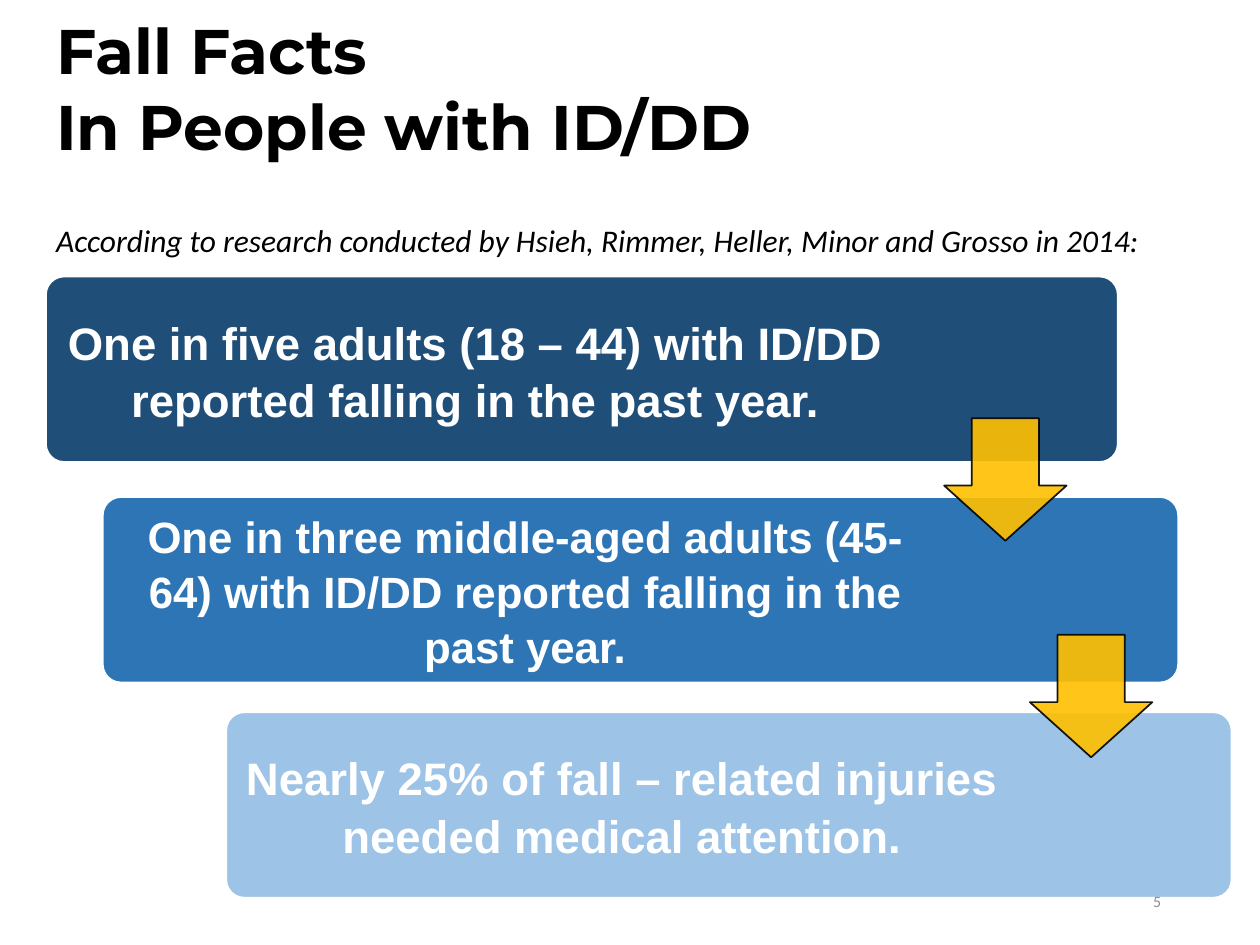
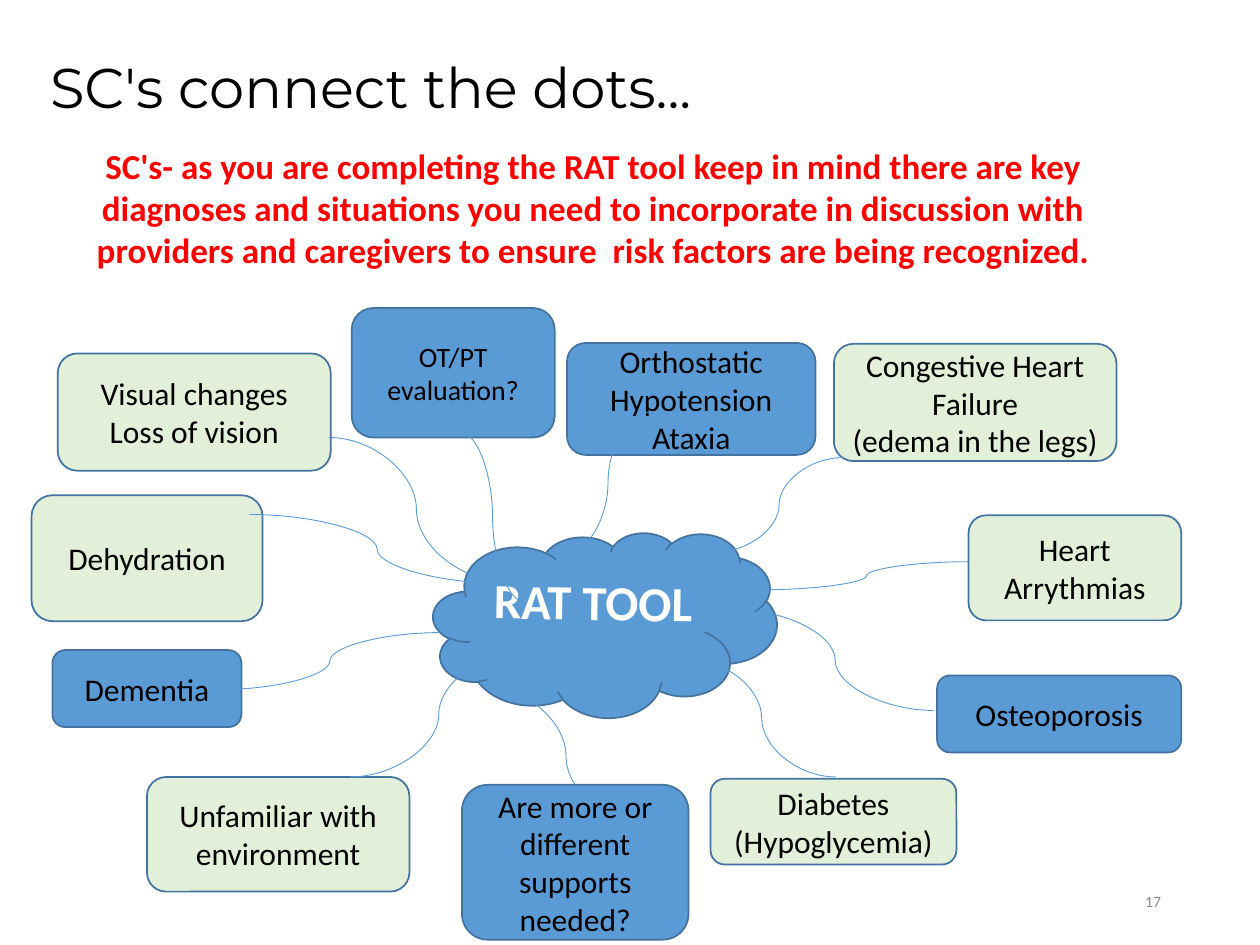
from lxml.etree import SubElement
from pptx import Presentation
from pptx.dml.color import RGBColor
from pptx.enum.shapes import MSO_CONNECTOR as Link, MSO_SHAPE as Shape
from pptx.enum.text import MSO_ANCHOR as Anchor, PP_ALIGN as Align
from pptx.oxml.ns import qn
from pptx.util import Pt

BLACK, WHITE, GREY, RED = "000000", "FFFFFF", "8C8C8C", "FF0000"
NAVY, MID_BLUE, PALE_BLUE, GOLD = "1F4E79", "2E75B6", "9DC3E6", "FFC000"
BLUE, GREEN, EDGE = "5B9BD5", "E2F0D9", "43739E"
TITLE_FONT, BODY_FONT, CARD_FONT = "Montserrat", "Calibri", "Arial"

CARD_HEIGHT, CARD_PAD, ARROW_SIZE = 106.5, 3.25, 70
FACTS = [
    ((0, 0, 613), 485, 26, 7.75, NAVY,
     "One in five adults (18 – 44) with ID/DD reported falling in the past year."),
    ((32.5, 126, 615), 476.5, 25, 7.5, MID_BLUE,
     "One in three middle-aged adults (45-64) with ID/DD reported falling in the past year."),
    ((103, 249, 575), 446.5, 26, 7.75, PALE_BLUE,
     "Nearly 25% of fall – related injuries needed medical attention."),
]
FACT_ARROWS = [(513.5, 81.25), (562.5, 205)]

CLOUD = (229.5, 128, 196.5, 106)
FACTORS = [
    ((15, 26, 156, 67), GREEN, ["Visual changes", "Loss of vision"]),
    ((306, 20, 142, 64), BLUE, ["Orthostatic Hypotension", "Ataxia"]),
    ((458.5, 20.5, 161.5, 67), GREEN, ["Congestive Heart Failure", "(edema in the legs)"]),
    ((535.5, 118.5, 121.5, 60), GREEN, ["Heart Arrythmias"]),
    ((517.5, 210, 139.5, 44), BLUE, ["Osteoporosis"]),
    ((388, 269, 140.5, 49), GREEN, ["Diabetes", "(Hypoglycemia)"]),
    ((66, 268, 150, 65.5), GREEN, ["Unfamiliar with environment"]),
    ((12, 195.5, 108, 44), BLUE, ["Dementia"]),
    ((0, 107, 132, 72), GREEN, ["Dehydration"]),
]
EVALUATION = ((183, 0, 116, 74), BLUE, ["OT/PT evaluation?"], 16)
SUPPORTS = ((246, 272.5, 129.5, 88.5), BLUE, ["Are more or different supports needed?"])
DOT_LINKS = [
    (403, 172.5, 515.5, 230), (463.5, 85.5, 391, 139.5), (535.5, 145, 419, 161),
    (459.5, 268, 375, 200.5), (232.5, 185.5, 108.5, 218), (283.5, 196, 182, 268),
    (355.5, 297, 255.5, 215), (353, 59.5, 306, 140), (270.5, 157.5, 124.5, 118),
    (270, 156, 170, 74), (281, 167.5, 246, 71.5),
]


def color(value):
    """Turn a hex string into a colour."""
    return RGBColor.from_string(value)


def points(*lengths):
    """Turn numbers into point lengths."""
    return [Pt(length) for length in lengths]


def within(region, box):
    """Shift a box by the top left corner of its region."""
    return (region[0] + box[0], region[1] + box[1], *box[2:])


def write(frame, lines, size, ink=BLACK, face=BODY_FONT, bold=False, italic=False,
          align=Align.LEFT, anchor=Anchor.TOP):
    """Fill a text frame with one styled run per paragraph."""
    frame.word_wrap = True
    frame.vertical_anchor = anchor
    for index, line in enumerate(lines):
        paragraph = frame.add_paragraph() if index else frame.paragraphs[0]
        paragraph.alignment = align
        run = paragraph.add_run()
        run.text = line
        run.font.name, run.font.size = face, Pt(size)
        run.font.bold, run.font.italic = bold, italic
        run.font.color.rgb = color(ink)
    return frame


def add_text(slide, box, lines, size, **style):
    """Add a text box and return its frame."""
    return write(slide.shapes.add_textbox(*points(*box)).text_frame, lines, size, **style)


def add_shape(slide, kind, box, fill, edge, weight=1):
    """Add a filled and outlined preset shape."""
    shape = slide.shapes.add_shape(kind, *points(*box))
    shape.shadow.inherit = False
    shape.fill.solid()
    shape.fill.fore_color.rgb = color(fill)
    shape.line.color.rgb = color(edge)
    shape.line.width = Pt(weight)
    return shape


def add_page_number(slide, number):
    """Add the slide number at the bottom right."""
    add_text(slide, (508.5, 500.5, 162, 28.8), [number], 9, ink=GREY,
             align=Align.RIGHT, anchor=Anchor.MIDDLE)


def add_fact_card(slide, box, text_width, size, inset, fill, fact):
    """Add one rounded card with its fact at the left."""
    card = add_shape(slide, Shape.ROUNDED_RECTANGLE, box, fill, WHITE, 1.5)
    card.adjustments[0] = 0.1
    text_box = within(box, (CARD_PAD, CARD_PAD, text_width, CARD_HEIGHT - 2 * CARD_PAD))
    frame = add_text(slide, text_box, [fact], size, ink=WHITE, face=CARD_FONT, bold=True,
                     align=Align.CENTER, anchor=Anchor.MIDDLE)
    frame.margin_left = frame.margin_right = Pt(inset)
    frame.margin_top = frame.margin_bottom = Pt(inset)
    frame.paragraphs[0].line_spacing = 1.05
    frame.paragraphs[0].space_after = Pt(6)


def add_step_arrow(slide, box):
    """Add a slightly transparent arrow that leads to the next card."""
    arrow = add_shape(slide, Shape.DOWN_ARROW, box, GOLD, BLACK)
    arrow.adjustments[0], arrow.adjustments[1] = 0.55, 0.45
    for tint in arrow.element.spPr.iter(qn("a:srgbClr")):
        SubElement(tint, qn("a:alpha"), val="90000")


def add_fact_steps(slide, region):
    """Add the staggered fact cards and the arrows between them."""
    for place, *details in FACTS:
        add_fact_card(slide, within(region, (*place, CARD_HEIGHT)), *details)
    for place in FACT_ARROWS:
        add_step_arrow(slide, within(region, (*place, ARROW_SIZE, ARROW_SIZE)))


def add_factor(slide, region, place, fill, lines, size=18):
    """Add one risk factor box."""
    factor = add_shape(slide, Shape.ROUNDED_RECTANGLE, within(region, place), fill, EDGE)
    write(factor.text_frame, lines, size, align=Align.CENTER, anchor=Anchor.MIDDLE)


def add_dot_link(slide, region, ends):
    """Add a thin curve between the cloud and a factor."""
    start, end = within(region, ends[:2]), within(region, ends[2:])
    curve = slide.shapes.add_connector(Link.CURVE, *points(*start, *end))
    curve.line.color.rgb = color(BLUE)
    curve.line.width = Pt(0.5)
    SubElement(curve.element.spPr, qn("a:effectLst"))


def add_factor_map(slide, region):
    """Add the central cloud, its risk factors and their links."""
    cloud = add_shape(slide, Shape.CLOUD, within(region, CLOUD), BLUE, EDGE)
    cloud.rotation = 1
    label = write(cloud.text_frame, ["RAT TOOL"], 28, ink=WHITE, bold=True,
                  align=Align.CENTER, anchor=Anchor.MIDDLE)
    label.margin_bottom = Pt(25.5)
    for factor in [*FACTORS, EVALUATION]:
        add_factor(slide, region, *factor)
    for ends in DOT_LINKS:
        add_dot_link(slide, region, ends)
    add_factor(slide, region, *SUPPORTS)


def build_facts_slide(slide):
    """Build the slide with the fall facts."""
    add_text(slide, (25, 21, 681, 75.5), ["Fall Facts", "In People with ID/DD"], 36,
             face=TITLE_FONT, bold=True, anchor=Anchor.BOTTOM)
    add_text(slide, (25, 122.5, 645, 29),
             ["According to research conducted by Hsieh, Rimmer, Heller, Minor and Grosso in 2014:"],
             18, italic=True)
    add_fact_steps(slide, (26, 157.75))
    add_page_number(slide, "5")


def build_dots_slide(slide):
    """Build the slide that connects the risk factors."""
    add_page_number(slide, "17")
    add_text(slide, (17.5, 79, 643, 80),
             ["SC's- as you are completing the RAT tool keep in mind there are key diagnoses and "
              "situations you need to incorporate in discussion with providers and caregivers "
              "to ensure  risk factors are being recognized."],
             20, ink=RED, bold=True, align=Align.CENTER)
    add_text(slide, (21.5, 26.5, 680.5, 67.5), ["SC's connect the dots..."], 32, face=TITLE_FONT)
    add_factor_map(slide, (18, 176))


def main():
    """Build and save both slides."""
    deck = Presentation()
    deck.slide_width, deck.slide_height = points(720, 540)
    for build in (build_facts_slide, build_dots_slide):
        build(deck.slides.add_slide(deck.slide_layouts[6]))
    deck.save("out.pptx")


if __name__ == "__main__":
    main()
